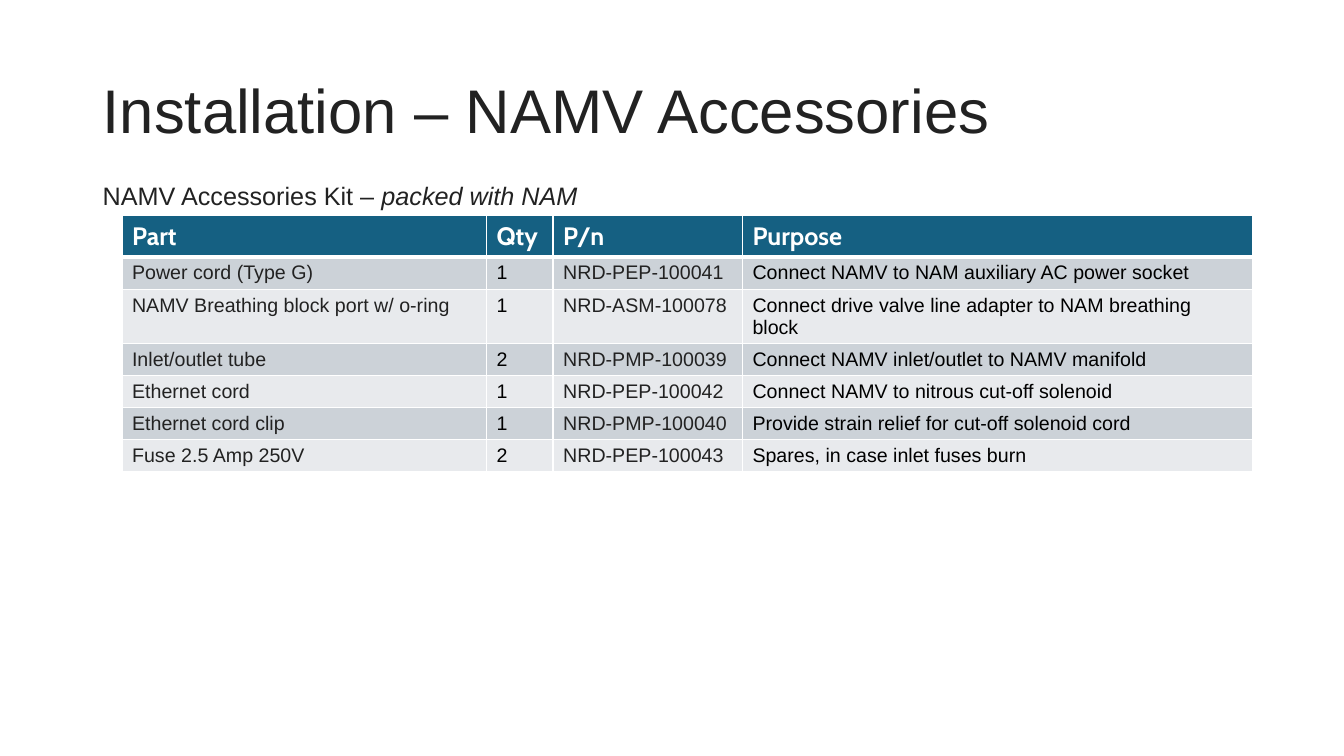
from dataclasses import dataclass

from lxml.etree import SubElement
from pptx import Presentation
from pptx.dml.color import RGBColor as Rgb
from pptx.enum.text import MSO_ANCHOR as Anchor, MSO_AUTO_SIZE as AutoSize, PP_ALIGN as Align
from pptx.oxml.ns import qn
from pptx.util import Inches, Pt


@dataclass(frozen=True)
class Theme:
    body_font: str = "Arial"
    header_font: str = "Cabin"
    ink: str = "222222"
    black: str = "000000"
    white: str = "FFFFFF"
    header_fill: str = "156082"
    bands: tuple = ("CCD2D8", "E8EAED")
    title_size: int = 44
    heading_size: int = 18
    cell_size: int = 14


THEME = Theme()

TITLE = "Installation – NAMV Accessories"
KIT_NAME, KIT_NOTE = "NAMV Accessories Kit – ", "packed with NAM"
HEADERS = ("Part", "Qty", "P/n", "Purpose")
ACCESSORIES = (
    ("Power cord (Type G)", "1", "NRD-PEP-100041", "Connect NAMV to NAM auxiliary AC power socket"),
    ("NAMV Breathing block port w/ o-ring", "1", "NRD-ASM-100078",
     "Connect drive valve line adapter to NAM breathing block"),
    ("Inlet/outlet tube", "2", "NRD-PMP-100039", "Connect NAMV inlet/outlet to NAMV manifold"),
    ("Ethernet cord", "1", "NRD-PEP-100042", "Connect NAMV to nitrous cut-off solenoid"),
    ("Ethernet cord clip", "1", "NRD-PMP-100040", "Provide strain relief for cut-off solenoid cord"),
    ("Fuse 2.5 Amp 250V", "2", "NRD-PEP-100043", "Spares, in case inlet fuses burn"),
)
COLUMN_WIDTHS = (3.62, 0.66, 1.88, 5.06)
HEADER_HEIGHT, ROW_HEIGHT, WRAPPED_HEIGHT = 0.41, 0.31, 0.53
WRAPPED_ROW = 2


def set_font(font, name, size, color, bold=False):
    font.name, font.size, font.bold = name, Pt(size), bold
    font.color.rgb = Rgb.from_string(color)


def add_title(slide, left, top, width, height):
    title = slide.shapes.title
    title.left, title.top, title.width, title.height = map(Inches, (left, top, width, height))
    frame = title.text_frame
    frame.text = TITLE
    frame.vertical_anchor = Anchor.MIDDLE
    frame.auto_size = AutoSize.NONE
    heading = frame.paragraphs[0]
    heading.alignment = Align.LEFT
    heading.line_spacing = 0.9
    set_font(heading.font, THEME.body_font, THEME.title_size, THEME.ink)


def add_kit_line(slide, left, top, width, height):
    frame = slide.shapes.add_textbox(*map(Inches, (left, top, width, height))).text_frame
    frame.word_wrap = True
    frame.auto_size = AutoSize.SHAPE_TO_FIT_TEXT
    kit_line = frame.paragraphs[0]
    kit_line.level = 1
    set_font(kit_line.font, THEME.body_font, THEME.heading_size, THEME.ink)
    kit_line.add_run().text = KIT_NAME
    note = kit_line.add_run()
    note.text = KIT_NOTE
    note.font.italic = True
    # Indent of the line
    properties = kit_line._p.get_or_add_pPr()
    properties.set("marL", str(Inches(0.81)))
    properties.set("indent", str(Inches(-0.31)))


def add_borders(cell, row):
    widths = {"a:lnL": 1, "a:lnR": 1, "a:lnT": 3 if row == 1 else 1, "a:lnB": 3 if row == 0 else 1}
    properties = cell._tc.get_or_add_tcPr()
    for side, points in widths.items():
        border = SubElement(properties, qn(side), w=str(Pt(points)))
        SubElement(SubElement(border, qn("a:solidFill")), qn("a:srgbClr"), val=THEME.white)


def format_cell(cell, text, row, column):
    cell.text = text
    font = cell.text_frame.paragraphs[0].font
    if row == 0:
        fill = THEME.header_fill
        set_font(font, THEME.header_font, THEME.heading_size, THEME.white, bold=True)
    else:
        fill = THEME.bands[(row - 1) % 2]
        color = THEME.black if HEADERS[column] in ("Qty", "Purpose") else THEME.ink
        set_font(font, THEME.body_font, THEME.cell_size, color)
    add_borders(cell, row)
    cell.fill.solid()
    cell.fill.fore_color.rgb = Rgb.from_string(fill)


def add_accessories_table(slide, left, top, width, height):
    rows = (HEADERS, *ACCESSORIES)
    table = slide.shapes.add_table(
        len(rows), len(HEADERS), *map(Inches, (left, top, width, height))).table
    for column, share in zip(table.columns, COLUMN_WIDTHS):
        column.width = Inches(width * share / sum(COLUMN_WIDTHS))
    for row, values in enumerate(rows):
        special = {0: HEADER_HEIGHT, WRAPPED_ROW: WRAPPED_HEIGHT}
        table.rows[row].height = Inches(special.get(row, ROW_HEIGHT))
        for column, text in enumerate(values):
            format_cell(table.cell(row, column), text, row, column)


def build_accessories_slide(deck):
    slide = deck.slides.add_slide(deck.slide_layouts.get_by_name("Title Only"))
    add_title(slide, 0.92, 0.4, 11.5, 1.45)
    add_accessories_table(slide, 1.21, 2.14, 11.21, 2.49)
    add_kit_line(slide, 0.42, 1.74, 7.33, 0.4)


def main():
    deck = Presentation()
    deck.slide_width, deck.slide_height = Inches(13.33), Inches(7.5)
    build_accessories_slide(deck)
    deck.save("out.pptx")


if __name__ == "__main__":
    main()
